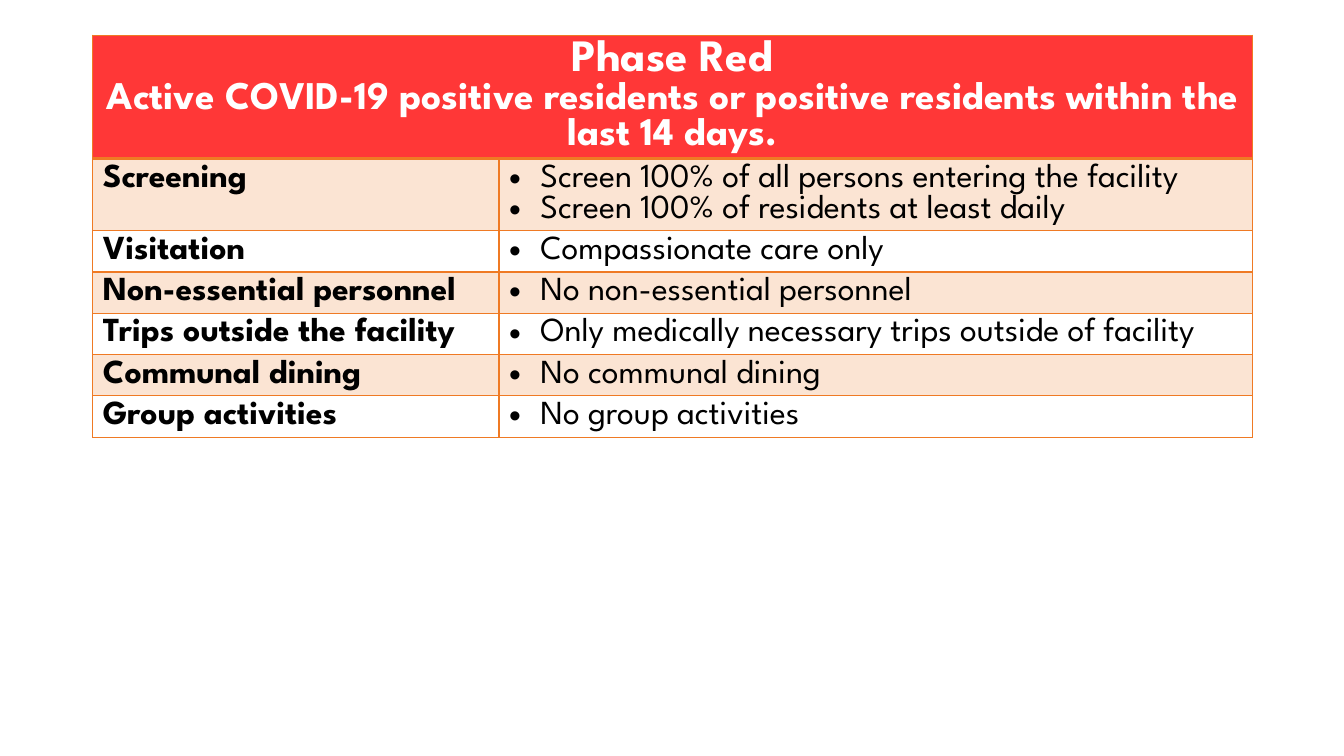
from lxml.etree import SubElement
from pptx import Presentation
from pptx.dml.color import RGBColor
from pptx.enum.text import PP_ALIGN
from pptx.oxml import parse_xml
from pptx.oxml.ns import qn, nsdecls
from pptx.util import Inches, Pt

FONT, RED, ORANGE = "League Spartan", "FF3737", "EF7A24"
TITLE = [
    ("Phase Red", 32),
    ("Active COVID-19 positive residents or positive residents within the last 14 days.", 28),
]
RULES = [
    ("Screening", ["Screen 100% of all persons entering the facility",
                   "Screen 100% of residents at least daily"]),
    ("Visitation", ["Compassionate care only"]),
    ("Non-essential personnel", ["No non-essential personnel"]),
    ("Trips outside the facility", ["Only medically necessary trips outside of facility"]),
    ("Communal dining", ["No communal dining"]),
    ("Group activities", ["No group activities"]),
]


def write(cell, lines, color, bold):
    """Fill a cell with (text, size) lines and return its paragraphs."""
    frame = cell.text_frame
    frame.text = "\n".join(text for text, size in lines)
    for par, (text, size) in zip(frame.paragraphs, lines):
        font = par.font
        font.name, font.size, font.bold = FONT, Pt(size), bold
        font.color.rgb = RGBColor.from_string(color)
    return frame.paragraphs


def paint(cell, color, alpha, top, bottom):
    """Set the fill and the four borders of a cell."""
    if color:
        cell.fill.solid()
        cell.fill.fore_color.rgb = RGBColor.from_string(color)
    else:
        cell.fill.background()
    props = cell._tc.get_or_add_tcPr()
    if alpha:
        tint = props.find(".//" + qn("a:srgbClr"))
        SubElement(tint, qn("a:alpha"), val=str(alpha * 1000))
    for spot, (side, width) in enumerate(zip("LRTB", (1, 1, top, bottom))):
        props.insert(spot, parse_xml(
            f'<a:ln{side} {nsdecls("a")} w="{Pt(width)}"><a:solidFill>'
            f'<a:srgbClr val="{ORANGE}"/></a:solidFill></a:ln{side}>'))


deck = Presentation()
deck.slide_width, deck.slide_height = Inches(13.33), Inches(7.5)
slide = deck.slides.add_slide(deck.slide_layouts[6])

# Table grid
count = len(RULES) + 1
row = Inches(0.41)
table = slide.shapes.add_table(
    count, 2, Inches(0.92), Inches(0.35), Inches(11.5), row * count).table
for col, width in zip(table.columns, (4.03, 7.47)):
    col.width = Inches(width)
for line in table.rows:
    line.height = row

# Heading across both columns
head = table.cell(0, 0)
head.merge(table.cell(0, 1))
for par in write(head, TITLE, "FFFFFF", True):
    par.alignment = PP_ALIGN.CENTER
for cell in table.rows[0].cells:
    paint(cell, RED, None, 1, 2)

# One row per rule, every other one tinted
for num, (topic, items) in enumerate(RULES, 1):
    left, right = table.rows[num].cells
    write(left, [(topic, 24)], "000000", True)
    for par in write(right, [(item, 24) for item in items], "000000", False):
        props = par._p.get_or_add_pPr()
        props.set("marL", str(Inches(0.31)))
        props.set("indent", str(-Inches(0.31)))
        mark = parse_xml(f'<a:buChar {nsdecls("a")} char="•"/>')
        face = parse_xml(f'<a:buFont {nsdecls("a")} typeface="Arial"/>')
        props.insert(0, mark)
        props.insert(0, face)
    for cell in (left, right):
        paint(cell, ORANGE if num % 2 else None, 20 if num % 2 else None,
              2 if num == 1 else 1, 1)

deck.save("out.pptx")
